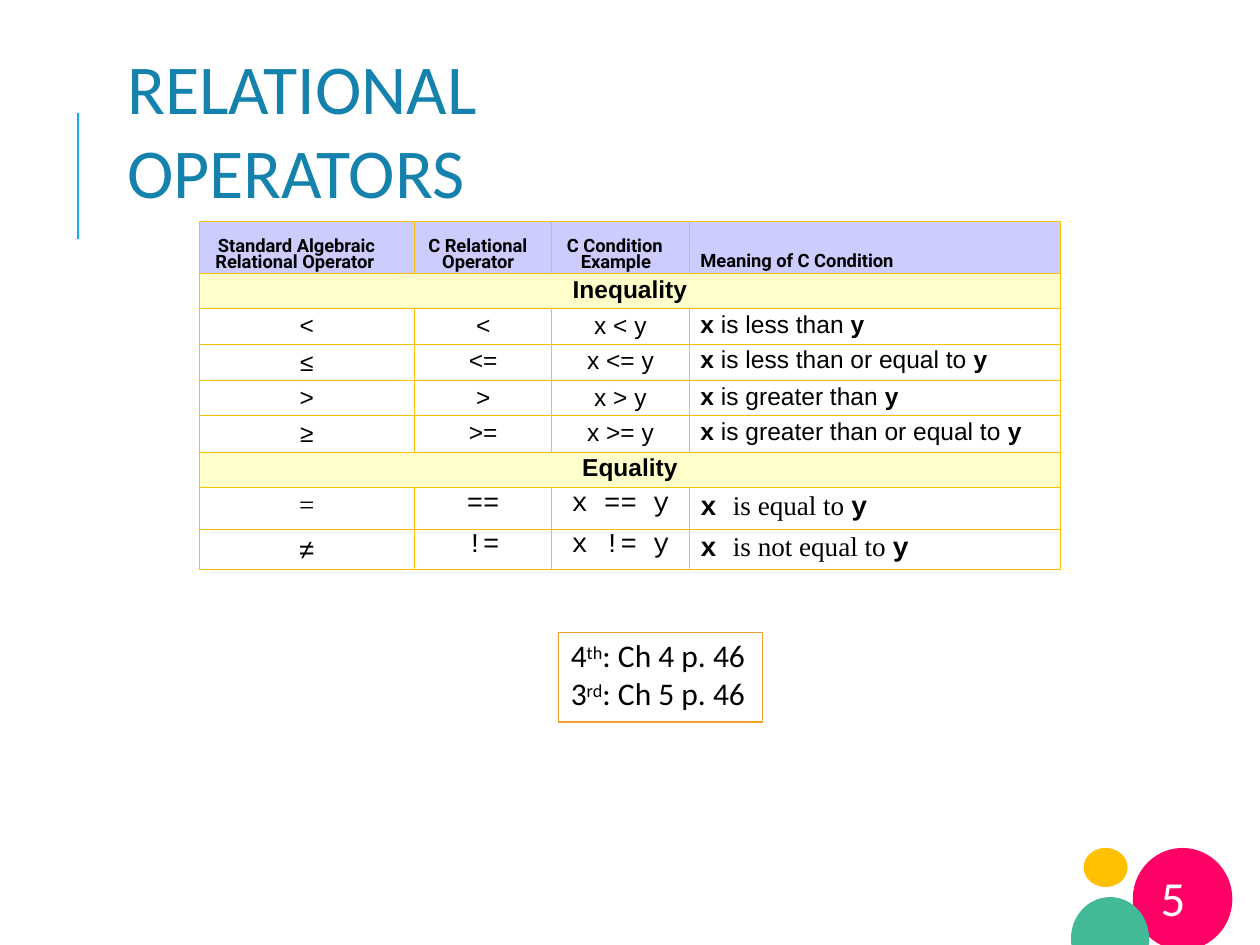
from math import cos, radians, sin

from lxml import etree
from pptx import Presentation
from pptx.dml.color import RGBColor
from pptx.enum.shapes import MSO_CONNECTOR, MSO_SHAPE
from pptx.enum.text import MSO_ANCHOR, MSO_AUTO_SIZE, PP_ALIGN
from pptx.oxml.ns import qn
from pptx.util import Inches, Pt

LEFT, CENTER = PP_ALIGN.LEFT, PP_ALIGN.CENTER
TOP, MIDDLE = MSO_ANCHOR.TOP, MSO_ANCHOR.MIDDLE
GROW = MSO_AUTO_SIZE.SHAPE_TO_FIT_TEXT
STRAIGHT = MSO_CONNECTOR.STRAIGHT
OVAL, RECTANGLE = MSO_SHAPE.OVAL, MSO_SHAPE.RECTANGLE

COLORS = {
    "title": "1482AC", "accent": "1CADE4", "text": "000000", "white": "FFFFFF",
    "yellow": "FFC000", "pink": "FF0066", "green": "42BA97",
    "header": "CCCCFF", "section": "FFFFCC", "reference": "EFA12D",
}
COLUMNS = [1.71, 1.09, 1.09, 2.95]
ROWS = [0.41, 0.28, 0.28, 0.29, 0.28, 0.29, 0.28, 0.33, 0.32]
HEADERS = [
    ("Standard Algebraic Relational Operator", 0.13, 0.02),
    ("C Relational Operator", 0.22, -0.11),
    ("C Condition Example", 0.23, -0.11),
]
INEQUALITIES = [
    ("<", "<", "less than", 0.03),
    ("≤", "<=", "less than or equal to", 0.04),
    (">", ">", "greater than", 0.03),
    ("≥", ">=", "greater than or equal to", 0.04),
]
EQUALITIES = [
    ("=", "==", "equal to", "Times New Roman", 0.02),
    ("≠", "!=", "not equal to", "Arial", 0.05),
]


def color(name):
    return RGBColor.from_string(COLORS[name])


class SlideBuilder:
    """Holds the current slide and the style shared by its elements."""

    def __init__(self, page):
        self.page = page

    def paragraph(self, para, spans, size, font="Calibri", ink="text", bold=False,
                  align=LEFT, margin=0, indent=0, spacing=None):
        properties = para._p.get_or_add_pPr()
        properties.set("marL", str(Inches(margin)))
        properties.set("indent", str(Inches(indent)))
        para.alignment = align
        if spacing:
            para.line_spacing = spacing
        para.font.size = Pt(size)
        para.font.name = font
        para.font.bold = bold
        para.font.color.rgb = color(ink)
        for text, changes in spans:
            span = para.add_run()
            span.text = text
            if "font" in changes:
                span.font.name = changes["font"]
            if "bold" in changes:
                span.font.bold = changes["bold"]
            if "baseline" in changes:
                span._r.get_or_add_rPr().set("baseline", changes["baseline"])

    def frame(self, box, top, anchor):
        frame = box.text_frame
        frame.word_wrap = True
        frame.auto_size = GROW
        frame.vertical_anchor = anchor
        frame.margin_left = frame.margin_right = frame.margin_bottom = 0
        frame.margin_top = Inches(top)
        return frame

    def text(self, area, text, size, top=0, **style):
        box = self.page.shapes.add_textbox(*map(Inches, area))
        frame = self.frame(box, top, MIDDLE)
        self.paragraph(frame.paragraphs[0], [(text, {})], size, **style)

    def fill(self, shape, name):
        shape.shadow.inherit = False
        shape.fill.solid()
        shape.fill.fore_color.rgb = color(name)
        shape.line.fill.background()

    def oval(self, area, name):
        self.fill(self.page.shapes.add_shape(OVAL, *map(Inches, area)), name)

    def cut_oval(self, x, y, radius_x, radius_y, start, end, name):
        points = [(Inches(x + radius_x * cos(radians(angle))),
                   Inches(y + radius_y * sin(radians(angle))))
                  for angle in range(start, end + 1, 2)]
        builder = self.page.shapes.build_freeform(*points[0])
        builder.add_line_segments(points[1:], close=True)
        self.fill(builder.convert_to_shape(), name)

    def line(self, ends, name, width):
        line = self.page.shapes.add_connector(STRAIGHT, *map(Inches, ends))
        line.line.color.rgb = color(name)
        line.line.width = Pt(width)
        etree.SubElement(line._element.spPr, qn("a:effectLst"))

    def outlined_box(self, area, lines, name):
        box = self.page.shapes.add_shape(RECTANGLE, *map(Inches, area))
        box.shadow.inherit = False
        box.fill.background()
        box.line.color.rgb = color(name)
        box.line.width = Pt(0.72)
        frame = self.frame(box, 0.03, TOP)
        for index, spans in enumerate(lines):
            para = frame.add_paragraph() if index else frame.paragraphs[0]
            self.paragraph(para, spans, 18, margin=0.1)

    def table(self, left, top):
        table = self.page.shapes.add_table(
            len(ROWS), len(COLUMNS), Inches(left), Inches(top),
            Inches(sum(COLUMNS)), Inches(sum(ROWS))).table
        table.first_row = table.horz_banding = False
        for column, width in zip(table.columns, COLUMNS):
            column.width = Inches(width)
        for row, height in zip(table.rows, ROWS):
            row.height = Inches(height)
        for cell in table.iter_cells():
            self.border(cell)
            cell.fill.background()
        return table

    def border(self, cell):
        properties = cell._tc.get_or_add_tcPr()
        for side in ("lnL", "lnR", "lnT", "lnB"):
            edge = etree.SubElement(properties, qn(f"a:{side}"), w=str(Pt(0.5)))
            paint = etree.SubElement(edge, qn("a:solidFill"))
            etree.SubElement(paint, qn("a:srgbClr"), val=COLORS["yellow"])

    def cell(self, cell, spans, size, top, background=None, **style):
        cell.margin_left = cell.margin_right = cell.margin_bottom = 0
        cell.margin_top = Inches(top)
        if background:
            cell.fill.solid()
            cell.fill.fore_color.rgb = color(background)
        self.paragraph(cell.text_frame.paragraphs[0], spans, size, **style)

    def section(self, table, row, name):
        table.cell(row, 0).merge(table.cell(row, len(COLUMNS) - 1))
        self.cell(table.cell(row, 0), [(name, {})], 14, 0.02, "section",
                  font="Arial", bold=True, align=CENTER)


def fill_operators(slide, table):
    for column, (name, margin, indent) in enumerate(HEADERS):
        slide.cell(table.cell(0, column), [(name, {})], 10.5, 0.15, "header",
                   font="Roboto", bold=True, margin=margin, indent=indent, spacing=0.72)
    slide.cell(table.cell(0, 3), [("Meaning of C Condition", {})], 10.5, 0.23, "header",
               font="Roboto", bold=True, margin=0.09, spacing=Pt(12))

    slide.section(table, 1, "Inequality")
    strong = {"bold": True}
    for row, (symbol, operator, meaning, top) in enumerate(INEQUALITIES, 2):
        for column, text in enumerate((symbol, operator, f"x {operator} y")):
            slide.cell(table.cell(row, column), [(text, {})], 14,
                       0.03 if column else top, font="Arial", align=CENTER)
        spans = [("x ", strong), (f"is {meaning} ", {}), ("y", strong)]
        slide.cell(table.cell(row, 3), spans, 14, 0.02, font="Arial", margin=0.09)

    slide.section(table, 6, "Equality")
    code = {"bold": True, "font": "Courier New"}
    for row, (symbol, operator, meaning, font, top) in enumerate(EQUALITIES, 7):
        slide.cell(table.cell(row, 0), [(symbol, {})], 15.5, top, font=font, align=CENTER)
        for column, text in enumerate((operator, f"x {operator} y"), 1):
            slide.cell(table.cell(row, column), [(text, {})], 15.5, 0.01,
                       font="Courier New", align=CENTER)
        spans = [("x ", code), (f"is {meaning} ", {}), ("y", code)]
        slide.cell(table.cell(row, 3), spans, 15.5, 0.03, font="Times New Roman", margin=0.09)


def main():
    deck = Presentation()
    deck.slide_width, deck.slide_height = Inches(10), Inches(7.5)
    slide = SlideBuilder(deck.slides.add_slide(deck.slide_layouts[6]))
    slide.line((0.62, 1.9, 0.62, 0.9), "accent", 1.5)
    slide.oval((8.6, 6.73, 0.35, 0.31), "yellow")
    slide.oval((8.99, 6.73, 0.79, 0.81), "pink")
    slide.cut_oval(8.81, 7.45, 0.31, 0.33, 143, 397, "green")
    slide.text((1, 0.67, 4.65, 0.69), "RELATIONAL OPERATORS", 40, top=0.01,
               ink="title", margin=0.01)
    slide.text((8.89, 7.08, 0.8, 0.3), "5", 28, ink="white", align=CENTER,
               margin=0.04, spacing=Pt(18.1))
    fill_operators(slide, slide.table(1.58, 1.76))
    raised = {"baseline": "25000"}
    slide.outlined_box((4.43, 5.02, 1.62, 0.71), [
        [("4", {}), ("th", raised), (": Ch 4 p. 46", {})],
        [("3", {}), ("rd", raised), (": Ch 5 p. 46", {})],
    ], "reference")
    deck.save("out.pptx")


if __name__ == "__main__":
    main()
